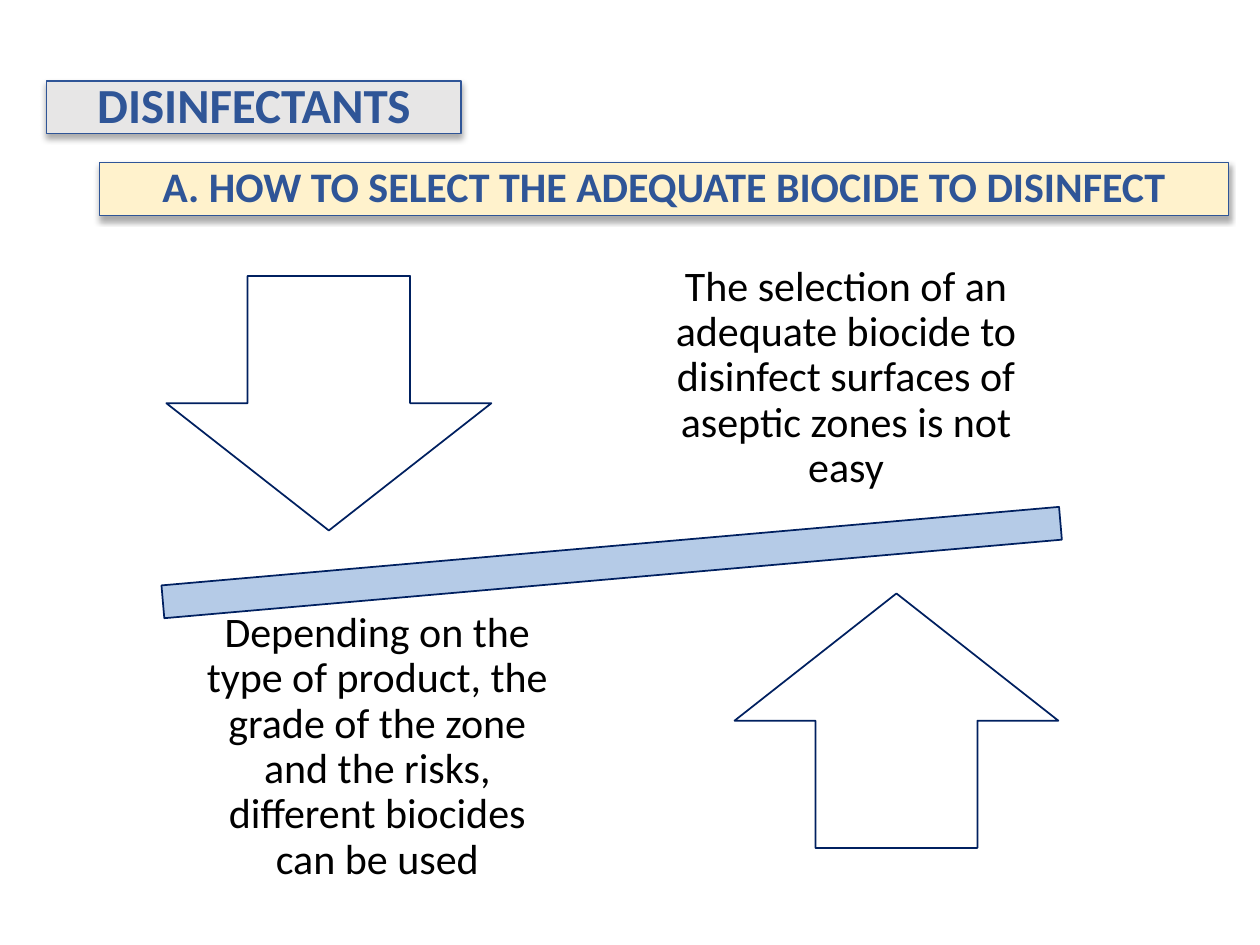
from lxml.etree import SubElement
from pptx import Presentation
from pptx.dml.color import RGBColor
from pptx.enum.shapes import MSO_SHAPE
from pptx.enum.text import MSO_ANCHOR, PP_ALIGN
from pptx.oxml.ns import qn
from pptx.util import Inches, Pt

COLORS = {"blue": "2F5597", "navy": "002060", "cream": "FFF2CC", "grey": "E7E6E6",
          "bar": "B5CBE7", "white": "FFFFFF", "black": "000000"}

# Boxes are left, top, width, height in inches
BANNERS = [
    ("A. HOW TO SELECT THE ADEQUATE BIOCIDE TO DISINFECT", (0.79, 1.29, 8.96, 0.42), "cream", 24),
    ("DISINFECTANTS", (0.37, 0.64, 3.29, 0.42), "grey", 28),
]
BALANCE = [
    (MSO_SHAPE.MATH_MINUS, (-0.01, 3.91, 9.73, 1.11), "bar", 355),
    (MSO_SHAPE.DOWN_ARROW, (1.32, 2.19, 2.58, 2.02), "white", 0),
    (MSO_SHAPE.UP_ARROW, (5.83, 4.71, 2.57, 2.02), "white", 0),
]
NOTES = [
    ("The selection of an adequate biocide to disinfect surfaces of aseptic zones is not easy",
     (5.15, 1.94, 3.13, 2.12)),
    ("Depending on the type of product, the grade of the zone and the risks, "
     "different biocides can be used", (1.43, 4.87, 3.13, 2.12)),
]


def rgb(name):
    return RGBColor.from_string(COLORS[name])


def add_box(s, kind, box, fill, line):
    sp = s.shapes.add_shape(kind, *map(Inches, box))
    sp.shadow.inherit = False
    sp.fill.solid()
    sp.fill.fore_color.rgb = rgb(fill)
    sp.line.color.rgb = rgb(line)
    sp.line.width = Pt(1)
    return sp


def add_shadow(sp):
    effects = sp._element.spPr.find(qn("a:effectLst"))
    shadow = SubElement(effects, qn("a:outerShdw"), blurRad=str(Pt(3.5)), dist=str(Pt(2.2)),
                        dir="5400000", rotWithShape="0")
    color = SubElement(shadow, qn("a:srgbClr"), val=COLORS["black"])
    SubElement(color, qn("a:alpha"), val="32000")


def write(sp, text, size, color, bold=False):
    tf = sp.text_frame
    tf.word_wrap = True
    tf.vertical_anchor = MSO_ANCHOR.MIDDLE
    p = tf.paragraphs[0]
    p.alignment = PP_ALIGN.CENTER
    p.line_spacing = 0.9
    r = p.add_run()
    r.text = text
    r.font.name = "Calibri"
    r.font.size = Pt(size)
    r.font.bold = bold
    r.font.color.rgb = rgb(color)
    return tf


prs = Presentation()
prs.slide_width, prs.slide_height = Inches(10), Inches(7.5)
s = prs.slides.add_slide(prs.slide_layouts[6])

# Title banners
for text, box, fill, size in BANNERS:
    sp = add_box(s, MSO_SHAPE.RECTANGLE, box, fill, "blue")
    add_shadow(sp)
    write(sp, text, size, "blue", bold=True)

# Tilted bar with its two arrows
for kind, box, fill, rotation in BALANCE:
    sp = add_box(s, kind, box, fill, "navy")
    sp.rotation = rotation

# Texts on either side of the bar
for text, box in NOTES:
    tf = write(s.shapes.add_textbox(*map(Inches, box)), text, 24, "black")
    tf.margin_left = tf.margin_right = tf.margin_top = tf.margin_bottom = Inches(0.19)

prs.save("out.pptx")
